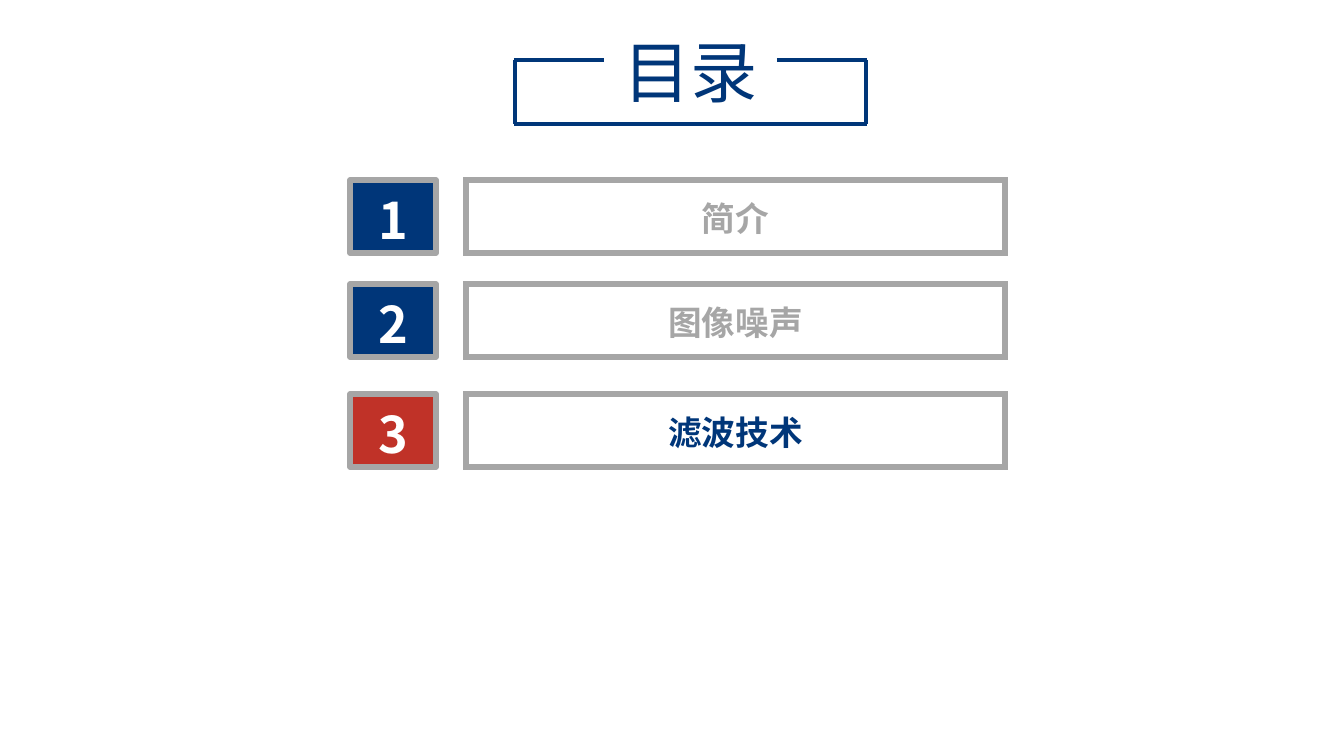
from dataclasses import dataclass
from lxml import etree
from pptx import Presentation
from pptx.dml.color import RGBColor
from pptx.enum.shapes import MSO_CONNECTOR, MSO_SHAPE
from pptx.enum.text import MSO_ANCHOR, PP_ALIGN
from pptx.oxml.ns import qn
from pptx.util import Emu, Pt

# Content: number, label, top in px, whether it is the current section
TITLE = "目录"
SECTIONS = [
    ("1", "简介", 180, False),
    ("2", "图像噪声", 284, False),
    ("3", "滤波技术", 394, True),
]


@dataclass(frozen=True)
class Theme:
    font: str = "Noto Sans CJK SC"
    navy: str = "003679"
    red: str = "C03228"
    grey: str = "A6A6A6"
    white: str = "FFFFFF"
    title_size: int = 48
    number_size: int = 36
    label_size: int = 24


T = Theme()

# Layout in px
SLIDE_W, SLIDE_H = 1344, 756
TITLE_BOX = (588, 25, 206, 92)
FRAME_L, FRAME_R, FRAME_T, FRAME_B = 514, 867, 60, 124
FRAME_STUB = 90
NUMBER_X, NUMBER_W = 350, 86
LABEL_X, LABEL_W = 466, 539
ROW_H = 73


def px(n):
    return Emu(round(n * 914400 / 100.8))


def rgb(color):
    return RGBColor.from_string(color)


def set_text(sp, text, size, color, bold=True, spacing=1.1):
    tf = sp.text_frame
    tf.text = text
    tf.word_wrap = True
    tf.vertical_anchor = MSO_ANCHOR.MIDDLE
    tf.margin_left = tf.margin_right = tf.margin_top = tf.margin_bottom = 0
    p = tf.paragraphs[0]
    p.alignment = PP_ALIGN.CENTER
    p.line_spacing = spacing
    r = p.runs[0]
    r.font.size, r.font.bold, r.font.name = Pt(size), bold, T.font
    r.font.color.rgb = rgb(color)
    ea = etree.SubElement(r.font._element, qn("a:ea"))
    ea.set("typeface", T.font)


def add_box(s, x, y, w, line_width, fill=None):
    sp = s.shapes.add_shape(MSO_SHAPE.RECTANGLE, px(x), px(y), px(w), px(ROW_H))
    sp.shadow.inherit = False
    if fill:
        sp.fill.solid()
        sp.fill.fore_color.rgb = rgb(fill)
    else:
        sp.fill.background()
    sp.line.color.rgb = rgb(T.grey)
    sp.line.width = Pt(line_width)
    return sp


def add_line(s, x1, y1, x2, y2):
    c = s.shapes.add_connector(MSO_CONNECTOR.STRAIGHT, px(x1), px(y1), px(x2), px(y2))
    c.line.color.rgb = rgb(T.navy)
    c.line.width = Pt(3)
    etree.SubElement(c._element.spPr, qn("a:effectLst"))


def main():
    prs = Presentation()
    prs.slide_width, prs.slide_height = px(SLIDE_W), px(SLIDE_H)
    s = prs.slides.add_slide(prs.slide_layouts[5])

    # Title
    title = s.shapes.title
    title.left, title.top, title.width, title.height = map(px, TITLE_BOX)
    set_text(title, TITLE, T.title_size, T.navy, bold=False, spacing=1.0)

    # Frame, open at the top around the title
    for x1, x2, y in [
        (FRAME_L, FRAME_L + FRAME_STUB, FRAME_T),
        (FRAME_R - FRAME_STUB, FRAME_R, FRAME_T),
        (FRAME_L, FRAME_R, FRAME_B),
    ]:
        add_line(s, x1, y, x2, y)
    for x in (FRAME_L + 1, FRAME_R - 1):
        add_line(s, x, FRAME_T, x, FRAME_B)

    # Sections: number box and label box
    for number, label, y, current in SECTIONS:
        sp = add_box(s, NUMBER_X, y, NUMBER_W, 4, T.red if current else T.navy)
        set_text(sp, number, T.number_size, T.white)

        sp = add_box(s, LABEL_X, y, LABEL_W, 4.5)
        set_text(sp, label, T.label_size, T.navy if current else T.grey)
        # Square corners
        etree.SubElement(sp._element.spPr.find(qn("a:ln")), qn("a:miter")).set("lim", "800000")

    prs.save("out.pptx")


if __name__ == "__main__":
    main()
